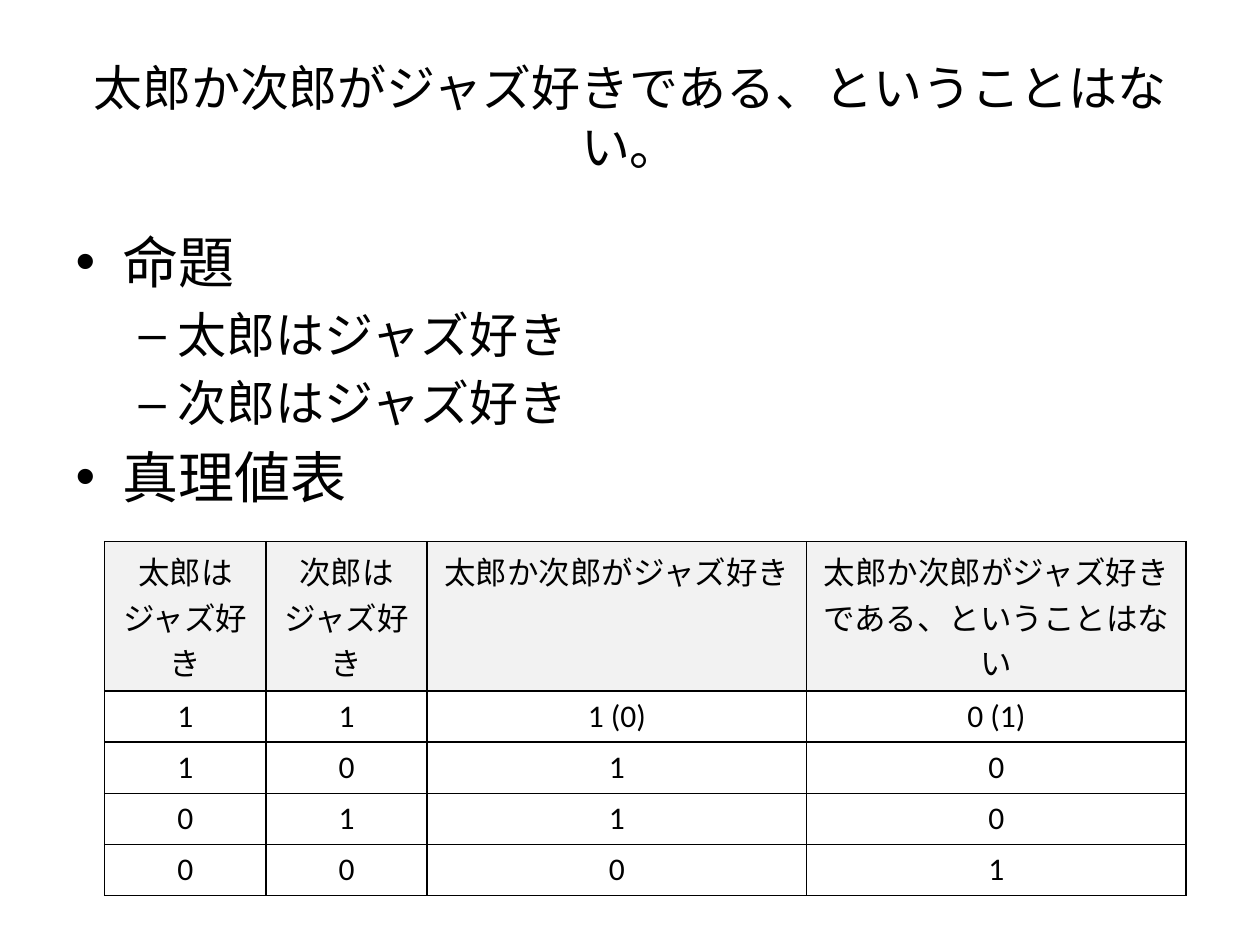
from lxml.etree import SubElement
from pptx import Presentation
from pptx.dml.color import RGBColor
from pptx.enum.text import MSO_ANCHOR, PP_ALIGN
from pptx.oxml.ns import qn
from pptx.util import Cm, Pt

TITLE = "太郎か次郎がジャズ好きである、ということはない。"
POINTS = [
    (0, "命題"),
    (1, "太郎はジャズ好き"),
    (1, "次郎はジャズ好き"),
    (0, "真理値表"),
]
TRUTH = [
    ["太郎はジャズ好き", "次郎はジャズ好き", "太郎か次郎がジャズ好き",
     "太郎か次郎がジャズ好きである、ということはない"],
    ["1", "1", "1 (0)", "0 (1)"],
    ["1", "0", "1", "0"],
    ["0", "1", "1", "0"],
    ["0", "0", "0", "1"],
]
WIDTHS = [3.25, 3.25, 7.65, 7.65]
SIZES = {0: 32, 1: 28}


def color(code):
    """Turn a hex string into a colour."""
    return RGBColor.from_string(code)


def place(shape, box):
    """Set a shape's left, top, width and height in centimetres."""
    for name, value in zip(("left", "top", "width", "height"), box):
        setattr(shape, name, Cm(value))


def style(para, size):
    """Give a paragraph the slide's font at the given size."""
    for name, value in {"name": "Calibri", "size": Pt(size)}.items():
        setattr(para.font, name, value)
    para.font.color.rgb = color("000000")


def border(cell, code="000000", points=1):
    """Draw all four sides of a cell."""
    props = cell._tc.get_or_add_tcPr()
    for index, side in enumerate(("lnL", "lnR", "lnT", "lnB")):
        line = props.makeelement(qn(f"a:{side}"), {"w": str(Pt(points))})
        fill = SubElement(line, qn("a:solidFill"))
        SubElement(fill, qn("a:srgbClr"), val=code)
        props.insert(index, line)


def heading(slide, box):
    """Fill the title placeholder."""
    title = slide.shapes.title
    place(title, box)
    frame = title.text_frame
    frame.text = TITLE
    frame.vertical_anchor = MSO_ANCHOR.MIDDLE
    para = frame.paragraphs[0]
    para.alignment = PP_ALIGN.CENTER
    style(para, 28)


def outline(slide, box):
    """Fill the body placeholder with the two-level list."""
    body = slide.placeholders[1]
    place(body, box)
    frame = body.text_frame
    frame.text = "\n".join(text for _, text in POINTS)
    for para, (level, _) in zip(frame.paragraphs, POINTS):
        para.level = level
        style(para, SIZES[level])


def table(slide, left, top, height):
    """Build the truth table, with rows of equal least height."""
    rows, cols = len(TRUTH), len(WIDTHS)
    frame = slide.shapes.add_table(
        rows, cols, Cm(left), Cm(top), Cm(sum(WIDTHS)), Cm(height * rows))
    grid = frame.table
    for name in ("first_row", "horz_banding"):
        setattr(grid, name, False)
    for column, width in zip(grid.columns, WIDTHS):
        column.width = Cm(width)
    for r, texts in enumerate(TRUTH):
        for c, text in enumerate(texts):
            cell = grid.cell(r, c)
            cell.text = text
            cell.fill.solid()
            cell.fill.fore_color.rgb = color("FFFFFF" if r else "F2F2F2")
            para = cell.text_frame.paragraphs[0]
            para.alignment = PP_ALIGN.CENTER
            style(para, 18)
            border(cell)


def main():
    """Build and save the slide."""
    deck = Presentation()
    deck.slide_width, deck.slide_height = Cm(25.4), Cm(19.05)
    slide = deck.slides.add_slide(deck.slide_layouts[1])
    heading(slide, (1.27, 0.76, 22.86, 3.18))
    outline(slide, (1.27, 4.45, 22.86, 12.57))
    table(slide, 2.11, 10.92, 1.03)
    deck.save("out.pptx")


if __name__ == "__main__":
    main()
